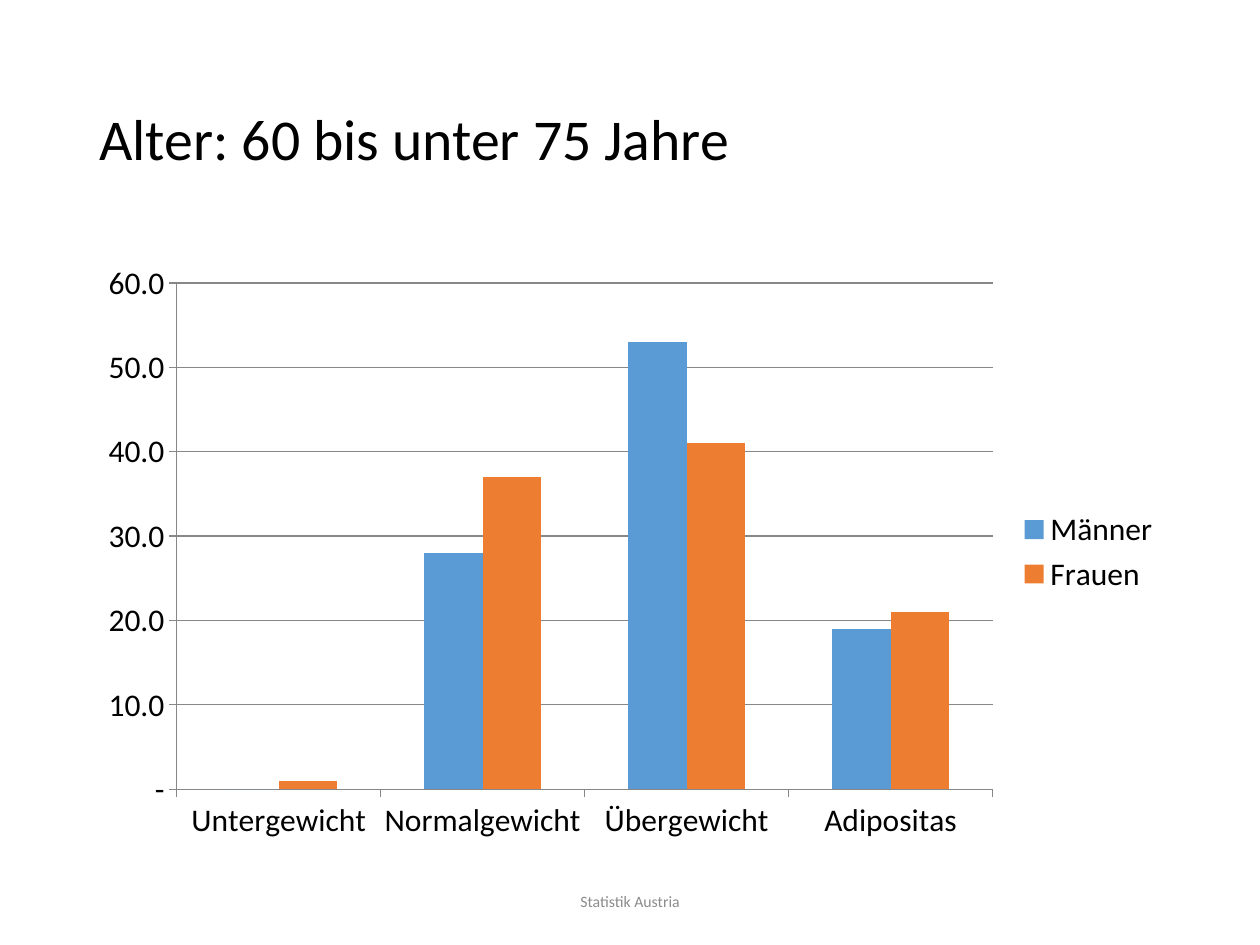
from dataclasses import dataclass

from pptx import Presentation
from pptx import util as u
from pptx.chart import data as cd
from pptx.dml import color as col
from pptx.enum import chart as ch, text as tx


@dataclass(frozen=True)
class Theme:
    font: str = "Calibri"
    ink: str = "000000"
    mute: str = "8C8C8C"
    line: str = "878787"
    bars: tuple = ("5B9BD5", "ED7D31")
    head: int = 33
    body: int = 18
    note: int = 9


def rgb(code):
    return col.RGBColor.from_string(code)


def apply(item, form):
    for key, val in form.items():
        setattr(item, key, val)


class Deck:
    def __init__(self, wide, high, theme):
        self.file = Presentation()
        apply(self.file, {"slide_width": u.Cm(wide), "slide_height": u.Cm(high)})
        self.theme = theme
        self.slide = self.file.slides.add_slide(self.file.slide_layouts[6])

    def style(self, font, size, tint):
        apply(font, {"name": self.theme.font, "size": u.Pt(size), "bold": False})
        font.color.rgb = rgb(tint)

    def label(self, words, area, size, tint, **form):
        frame = self.slide.shapes.add_textbox(*map(u.Cm, area)).text_frame
        apply(frame, {"word_wrap": True, "vertical_anchor": tx.MSO_ANCHOR.MIDDLE})
        para = frame.paragraphs[0]
        apply(para, form)
        run = para.add_run()
        run.text = words
        self.style(run.font, size, tint)

    def columns(self, cats, rows, area):
        data = cd.CategoryChartData()
        data.categories = cats
        for name, vals in rows.items():
            data.add_series(name, vals)
        chart = self.slide.shapes.add_chart(
            ch.XL_CHART_TYPE.COLUMN_CLUSTERED, *map(u.Cm, area), data
        ).chart
        apply(chart, {"has_title": False, "has_legend": True})
        self.style(chart.font, self.theme.body, self.theme.ink)
        apply(chart.legend, {
            "position": ch.XL_LEGEND_POSITION.RIGHT,
            "include_in_layout": False,
        })
        plot = chart.plots[0]
        apply(plot, {"gap_width": 150, "overlap": 0, "vary_by_categories": False})
        for row, tint in zip(plot.series, self.theme.bars):
            row.format.fill.solid()
            row.format.fill.fore_color.rgb = rgb(tint)
            row.invert_if_negative = False
        self.axes(chart)

    def axes(self, chart):
        cat, val = chart.category_axis, chart.value_axis
        apply(val, {
            "minimum_scale": 0,
            "maximum_scale": 60,
            "major_unit": 10,
            "has_major_gridlines": True,
        })
        apply(val.tick_labels, {
            "number_format": '#,##0.0;#,##0.0;"-"',
            "number_format_is_linked": False,
        })
        for axis in (cat, val):
            axis.major_tick_mark = ch.XL_TICK_MARK.OUTSIDE
        for part in (cat, val, val.major_gridlines):
            part.format.line.width = u.Pt(0.75)
            part.format.line.color.rgb = rgb(self.theme.line)


def main():
    theme = Theme()
    deck = Deck(25.4, 19.05, theme)
    left, wide = 1.75, 21.9
    deck.label("Alter: 60 bis unter 75 Jahre", (left, 1.02, wide, 3.68),
               theme.head, theme.ink, line_spacing=0.9)
    deck.columns(
        ("Untergewicht", "Normalgewicht", "Übergewicht", "Adipositas"),
        {"Männer": (0, 28, 53, 19), "Frauen": (1, 37, 41, 21)},
        (left, 5.08, wide, 12.09),
    )
    deck.label("Statistik Austria", (8.41, 17.65, 8.58, 1.02),
               theme.note, theme.mute, alignment=tx.PP_ALIGN.CENTER)
    deck.file.save("out.pptx")


if __name__ == "__main__":
    main()
